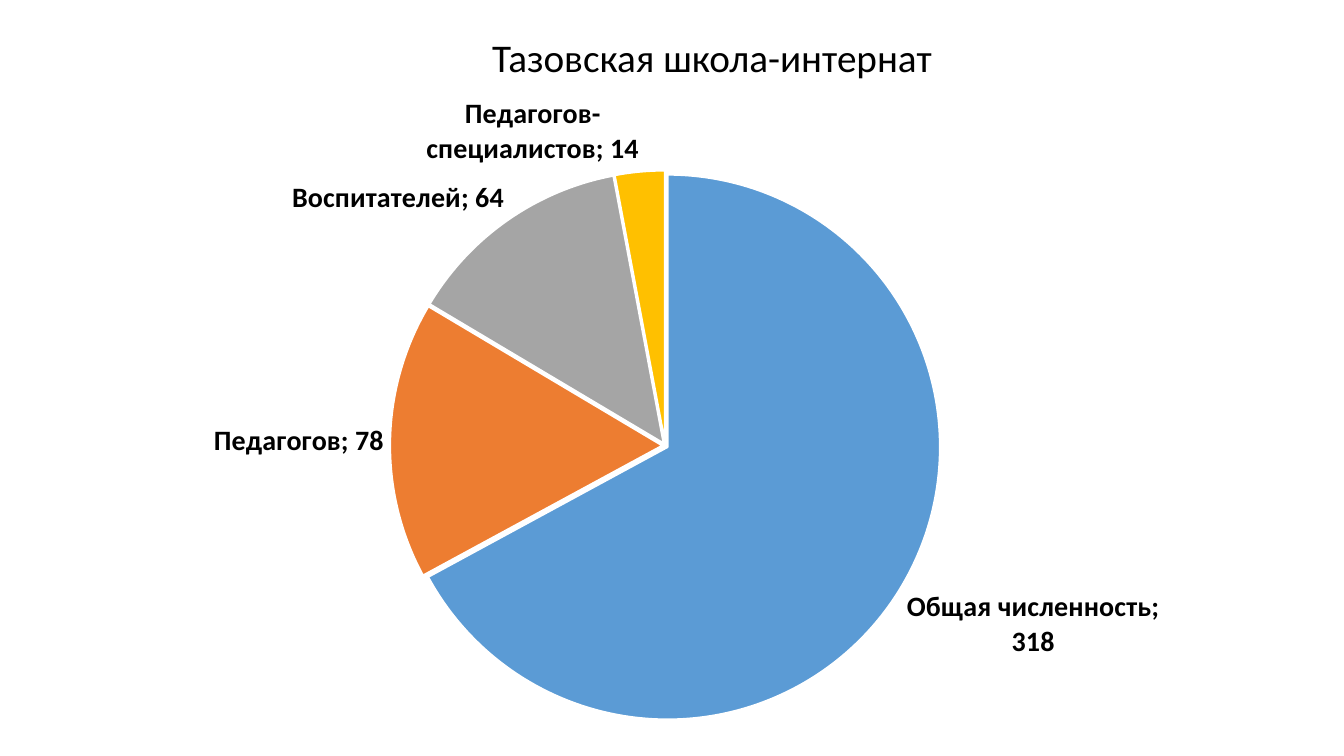
from dataclasses import dataclass

from lxml import etree
from pptx import Presentation
from pptx import util as u
from pptx.chart.data import CategoryChartData
from pptx.dml.color import RGBColor
from pptx.enum import chart as ch, text
from pptx.oxml import ns


@dataclass(frozen=True)
class Theme:
    font: str = "Calibri"
    ink: str = "000000"
    edge: str = "FFFFFF"
    slices: tuple = ("5B9BD5", "ED7D31", "A5A5A5", "FFC000")
    title_size: int = 28
    label_size: int = 20


class SlideBuilder:
    def __init__(self, prs, theme):
        self.theme = theme
        self.s = prs.slides.add_slide(prs.slide_layouts[6])

    def style(self, font, size, bold=False):
        font.name, font.size, font.bold = self.theme.font, u.Pt(size), bold
        font.color.rgb = RGBColor.from_string(self.theme.ink)

    def title(self, words, *box):
        tf = self.s.shapes.add_textbox(*map(u.Pt, box)).text_frame
        tf.word_wrap = True
        tf.vertical_anchor = text.MSO_ANCHOR.TOP
        p = tf.paragraphs[0]
        p.text = words
        p.alignment = text.PP_ALIGN.CENTER
        p.line_spacing = 0.9
        self.style(p.runs[0].font, self.theme.title_size)

    def pie(self, name, values, plot, *box):
        data = CategoryChartData()
        data.categories = list(values)
        data.add_series(name, list(values.values()))
        chart = self.s.shapes.add_chart(
            ch.XL_CHART_TYPE.PIE, *map(u.Pt, box), data).chart
        chart.has_title = chart.has_legend = False
        self.style(chart.font, 10)
        pie = chart.plots[0]
        pie.vary_by_categories = True

        # Slices, pulled slightly apart
        ser = pie.series[0]
        ser.format.line.color.rgb = RGBColor.from_string(self.theme.edge)
        explosion = etree.Element(ns.qn("c:explosion"), val="1")
        ser.format._element.find(ns.qn("c:spPr")).addnext(explosion)
        for i, color in enumerate(self.theme.slices):
            fmt = ser.points[i].format
            fmt.fill.solid()
            fmt.fill.fore_color.rgb = RGBColor.from_string(color)
            fmt.line.color.rgb = RGBColor.from_string(self.theme.edge)
            fmt.line.width = u.Pt(1.5)

        # Labels with category and value
        labels = ser.data_labels
        labels.show_category_name = labels.show_value = True
        labels.show_percentage = False
        labels.position = ch.XL_LABEL_POSITION.OUTSIDE_END
        self.style(labels.font, self.theme.label_size, bold=True)

        # Fixed place of the pie, as fractions of the chart
        area = chart._chartSpace.find(".//" + ns.qn("c:plotArea"))
        for old in area.findall(ns.qn("c:layout")):
            area.remove(old)
        layout = etree.Element(ns.qn("c:layout"))
        manual = etree.SubElement(layout, ns.qn("c:manualLayout"))
        settings = dict(layoutTarget="inner", xMode="edge", yMode="edge",
                        **dict(zip("xywh", plot)))
        for tag, val in settings.items():
            etree.SubElement(manual, ns.qn("c:" + tag), val=str(val))
        area.insert(0, layout)


def main():
    prs = Presentation()
    prs.slide_width, prs.slide_height = u.Pt(960), u.Pt(540)
    slide = SlideBuilder(prs, Theme())

    # Staff and pupil numbers
    counts = {"Общая численность": 318, "Педагогов": 78,
              "Воспитателей": 64, "Педагогов-специалистов": 14}
    slide.pie("Series 1", counts, (0.29, 0.13, 0.41, 0.84), 0, 61, 960, 468)

    # Heading
    slide.title("Тазовская школа-интернат", 144, 24, 729, 54)
    prs.save("out.pptx")


if __name__ == "__main__":
    main()
